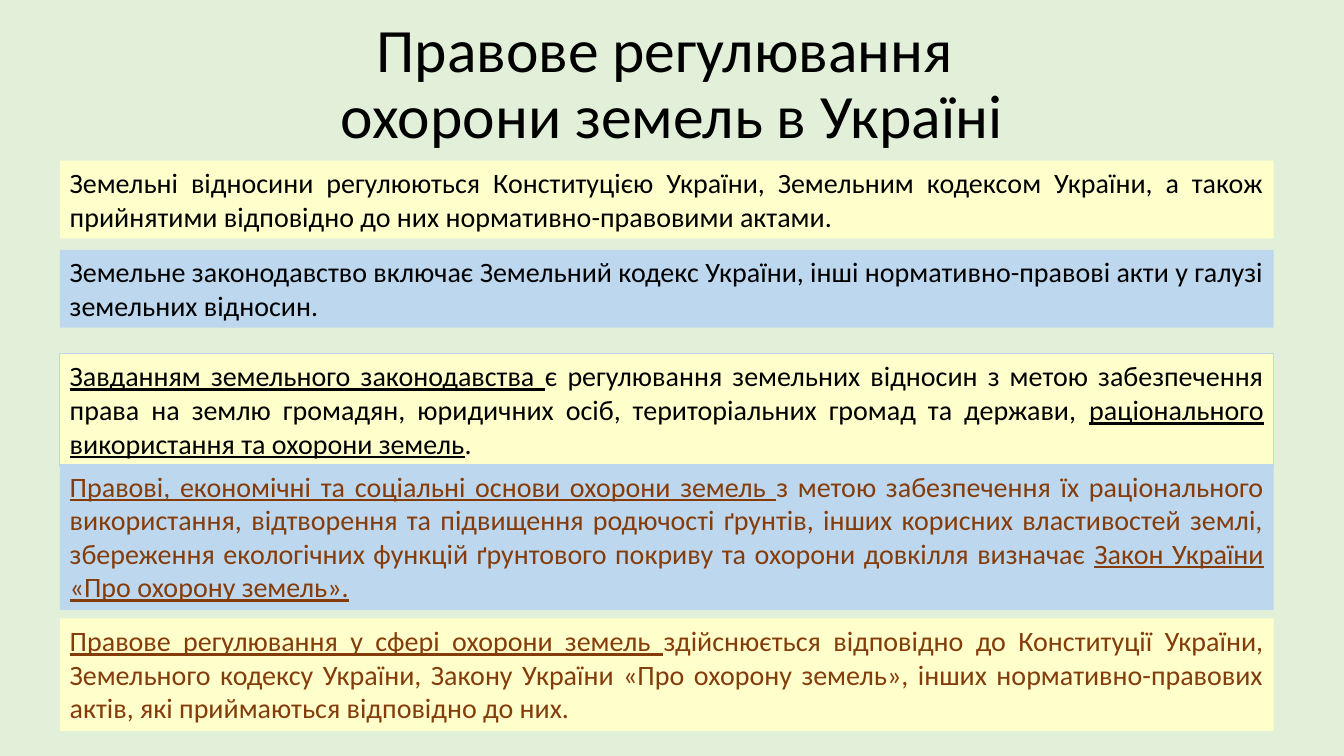
from pptx import Presentation
from pptx.dml.color import RGBColor
from pptx.enum.shapes import MSO_SHAPE
from pptx.enum.text import MSO_ANCHOR, MSO_AUTO_SIZE, PP_ALIGN
from pptx.util import Pt

PX = 9525
COLORS = {
    "background": "E2F0D9",
    "cream": "FFFFCC",
    "blue": "BDD7EE",
    "black": "000000",
    "brown": "843C0B",
}
PANEL_LEFT, PANEL_WIDTH = 57, 1156
TITLE = "Правове регулювання \vохорони земель в Україні"
PANELS = [
    (153, 74, "cream", "black", None, [
        ("Земельні відносини регулюються Конституцією України, Земельним кодексом України, "
         "а також прийнятими відповідно до них нормативно-правовими актами.", False),
    ]),
    (238, 74, "blue", "black", None, [
        ("Земельне законодавство включає Земельний кодекс України, "
         "інші нормативно-правові акти у галузі земельних відносин.", False),
    ]),
    (337, 107, "cream", "black", "blue", [
        ("Завданням земельного законодавства ", True),
        ("є регулювання земельних відносин з метою забезпечення права на землю громадян, "
         "юридичних осіб, територіальних громад та держави, ", False),
        ("раціонального використання та охорони земель", True),
        (".", False),
    ]),
    (442, 139, "blue", "brown", None, [
        ("Правові, економічні та соціальні основи охорони земель ", True),
        ("з метою забезпечення їх раціонального використання, відтворення та підвищення "
         "родючості ґрунтів, інших корисних властивостей землі, збереження екологічних функцій "
         "ґрунтового покриву та охорони довкілля визначає ", False),
        ("Закон України «Про охорону земель».", True),
    ]),
    (589, 107, "cream", "brown", None, [
        ("Правове регулювання у сфері охорони земель ", True),
        ("здійснюється відповідно до Конституції України, Земельного кодексу України, "
         "Закону України «Про охорону земель», інших нормативно-правових актів, "
         "які приймаються відповідно до них.", False),
    ]),
]


def color(name):
    return RGBColor.from_string(COLORS[name])


def px(*lengths):
    return [length * PX for length in lengths]


def apply_format(target, values):
    for attribute, value in values.items():
        setattr(target, attribute, value)


def paint(fill, name):
    fill.solid()
    fill.fore_color.rgb = color(name)


def style_font(font, size, ink, underline=False):
    apply_format(font, {"name": "Calibri", "size": Pt(size), "underline": underline})
    font.color.rgb = color(ink)


def add_title(slide):
    heading = slide.shapes.add_textbox(*px(88, 12, 1104, 139))
    apply_format(heading.text_frame, {
        "word_wrap": True,
        "auto_size": MSO_AUTO_SIZE.NONE,
        "vertical_anchor": MSO_ANCHOR.MIDDLE,
    })
    paragraph = heading.text_frame.paragraphs[0]
    paragraph.text = TITLE
    apply_format(paragraph, {"alignment": PP_ALIGN.CENTER, "line_spacing": 0.9})
    style_font(paragraph.font, 44, "black")
    for line in paragraph.runs:
        style_font(line.font, 44, "black")


def add_panel(slide, top, height, background, ink, border, phrases):
    panel = slide.shapes.add_shape(
        MSO_SHAPE.RECTANGLE, *px(PANEL_LEFT, top, PANEL_WIDTH, height))
    panel.shadow.inherit = False
    paint(panel.fill, background)
    if border:
        paint(panel.line.fill, border)
        panel.line.width = Pt(0.75)
    else:
        panel.line.fill.background()
    apply_format(panel.text_frame, {
        "word_wrap": True,
        "auto_size": MSO_AUTO_SIZE.SHAPE_TO_FIT_TEXT,
        "vertical_anchor": MSO_ANCHOR.TOP,
    })
    paragraph = panel.text_frame.paragraphs[0]
    paragraph.alignment = PP_ALIGN.JUSTIFY
    for words, underline in phrases:
        phrase = paragraph.add_run()
        phrase.text = words
        style_font(phrase.font, 20, ink, underline)


def main():
    presentation = Presentation()
    apply_format(presentation, {"slide_width": 1280 * PX, "slide_height": 720 * PX})
    slide = presentation.slides.add_slide(presentation.slide_layouts[6])
    paint(slide.background.fill, "background")
    add_title(slide)
    for panel in PANELS:
        add_panel(slide, *panel)
    presentation.save("out.pptx")


if __name__ == "__main__":
    main()
